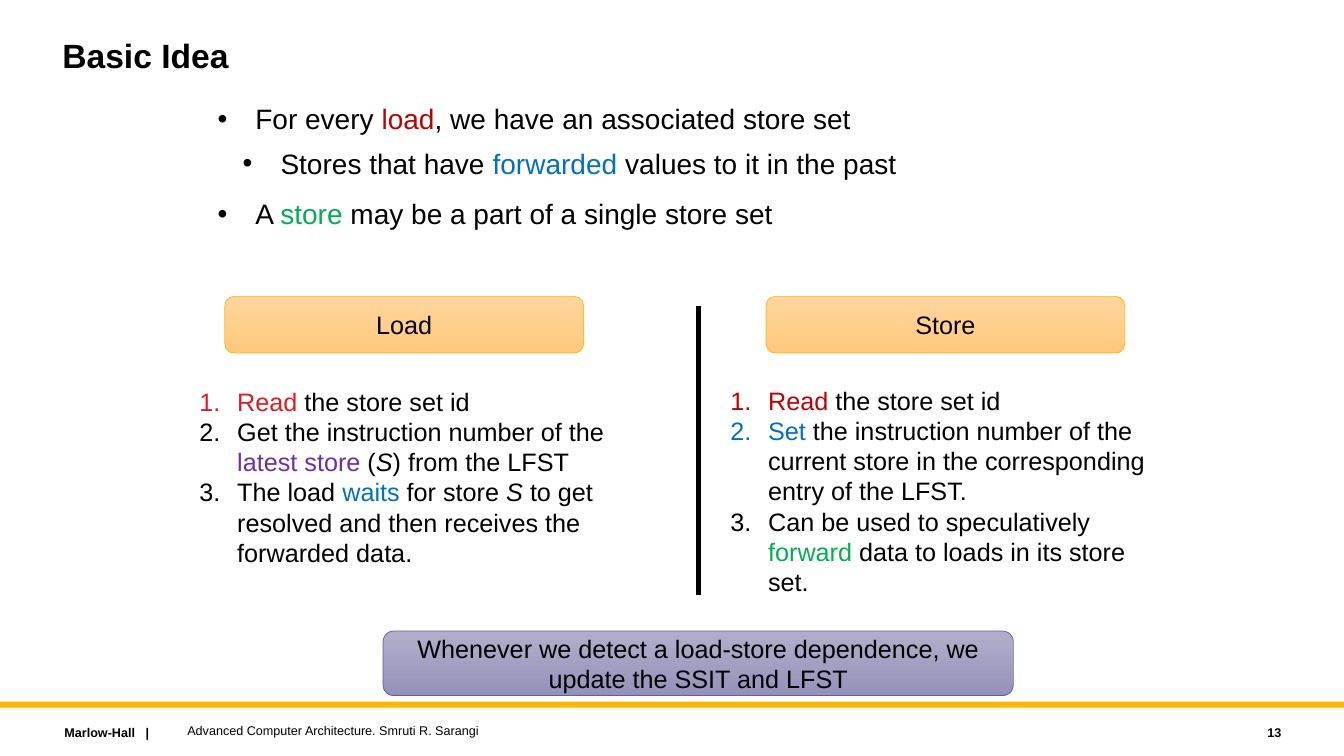
from dataclasses import dataclass
from typing import NamedTuple

from lxml import etree
from pptx import Presentation, util as u
from pptx.dml.color import RGBColor
from pptx.enum import shapes, text
from pptx.oxml.ns import qn

WIDE, HIGH = u.Inches(13.333), u.Inches(7.5)
BLACK, AMBER, RED, BLUE, GREEN = "000000", "FFB600", "C00000", "0070C0", "00B050"
LEFT, MID, RIGHT = text.PP_ALIGN.LEFT, text.PP_ALIGN.CENTER, text.PP_ALIGN.RIGHT
INDENT = u.Inches(0.375)


class Area(NamedTuple):
    """Left, top, width and height as percent of the slide."""
    x: float
    y: float
    w: float
    h: float


class Bit(NamedTuple):
    words: str
    tint: str = BLACK
    slant: bool = False


@dataclass
class Line:
    bits: list[Bit]
    mark: str = ""
    level: int = 0
    gap: float = 0


@dataclass
class Label:
    area: Area
    lines: list[Line]
    size: float
    bold: bool = False
    align: int = LEFT
    middle: bool = False


@dataclass
class Card:
    label: Label
    top: str
    base: str
    edge: str


def across(part: float) -> int:
    return round(WIDE * part / 100)


def down(part: float) -> int:
    return round(HIGH * part / 100)


def place(area: Area) -> tuple[int, int, int, int]:
    return across(area.x), down(area.y), across(area.w), down(area.h)


def color(code: str) -> RGBColor:
    return RGBColor.from_string(code)


def plain(words: str) -> list[Line]:
    return [Line([Bit(words)])]


def steps(*rows: list[Bit]) -> list[Line]:
    return [Line(row, "1") for row in rows]


def bullet(para, line: Line) -> None:
    props = para._p.get_or_add_pPr()
    props.set("marL", str(INDENT + line.level * u.Inches(0.25)))
    props.set("indent", str(-INDENT))
    if line.mark == "1":
        etree.SubElement(props, qn("a:buAutoNum"), type="arabicPeriod")
    else:
        etree.SubElement(props, qn("a:buFont"), typeface="Arial")
        etree.SubElement(props, qn("a:buChar"), char=line.mark)


def write(frame, label: Label) -> None:
    frame.word_wrap = True
    anchor = text.MSO_ANCHOR
    frame.vertical_anchor = anchor.MIDDLE if label.middle else anchor.TOP
    for i, line in enumerate(label.lines):
        para = frame.add_paragraph() if i else frame.paragraphs[0]
        para.alignment = label.align
        para.level = line.level
        para.space_before = u.Pt(line.gap)
        if line.mark:
            bullet(para, line)
        for bit in line.bits:
            for j, words in enumerate(bit.words.split("\n")):
                if j:
                    para.add_line_break()
                if not words:
                    continue
                run = para.add_run()
                run.text = words
                font = run.font
                font.name, font.size = "Arial", u.Pt(label.size)
                font.bold, font.italic = label.bold, bit.slant
                font.color.rgb = color(bit.tint)


def draw_label(slide, label: Label) -> None:
    write(slide.shapes.add_textbox(*place(label.area)).text_frame, label)


def draw_card(slide, card: Card) -> None:
    box = slide.shapes.add_shape(
        shapes.MSO_SHAPE.ROUNDED_RECTANGLE, *place(card.label.area))
    box.shadow.inherit = False
    box.fill.gradient()
    box.fill.gradient_angle = 270
    for stop, code, spot in zip(box.fill.gradient_stops, (card.top, card.base), (0, 1)):
        stop.color.rgb = color(code)
        stop.position = spot
    box.line.color.rgb = color(card.edge)
    box.line.width = u.Pt(0.5)
    write(box.text_frame, card.label)


def draw_bar(slide, area: Area) -> None:
    bar = slide.shapes.add_shape(shapes.MSO_SHAPE.RECTANGLE, *place(area))
    bar.shadow.inherit = False
    bar.fill.solid()
    bar.fill.fore_color.rgb = color(AMBER)
    bar.line.fill.background()


def draw_rule(slide, x: float, top: float, base: float) -> None:
    rule = slide.shapes.add_connector(
        shapes.MSO_CONNECTOR.STRAIGHT, across(x), down(top), across(x), down(base))
    rule.line.color.rgb = color(BLACK)
    rule.line.width = u.Pt(3)
    etree.SubElement(rule._element.spPr, qn("a:effectLst"))


# Title, main points and footer
POINTS = [
    Line([Bit("For every "), Bit("load", RED),
          Bit(", we have an associated store set")], "•"),
    Line([Bit("Stores that have "), Bit("forwarded", BLUE),
          Bit(" values to it in the past")], "•", 1, 8),
    Line([Bit("A "), Bit("store", GREEN),
          Bit(" may be a part of a single store set")], "•", 0, 12),
]
# Steps taken by each kind of instruction
LOAD = steps(
    [Bit("Read", "E21A23"), Bit(" the store set id")],
    [Bit("Get the instruction number of the "), Bit("latest store", "7030A0"),
     Bit(" ("), Bit("S", slant=True), Bit(") from the LFST")],
    [Bit("The load "), Bit("waits", BLUE), Bit(" for store "), Bit("S", slant=True),
     Bit(" to get resolved and then receives the forwarded data.")],
)
STORE = steps(
    [Bit("Read", RED), Bit(" the store set id")],
    [Bit("Set", BLUE), Bit(" the instruction number of the\n"
                           "current store in the corresponding\nentry of the LFST.")],
    [Bit("Can be used to speculatively\n"), Bit("forward", GREEN),
     Bit(" data to loads in its store \nset.")],
)
LABELS = [
    Label(Area(4.05, 95.2, 17, 3.33), plain("Marlow-Hall   |"), 9, bold=True),
    Label(Area(3.9, 4, 75, 12), plain("Basic Idea"), 24, bold=True),
    Label(Area(15.45, 12.8, 67.4, 23.5), POINTS, 20),
    Label(Area(13.2, 94.93, 60, 3.33),
          plain("Advanced Computer Architecture. Smruti R. Sarangi"), 9, middle=True),
    Label(Area(85.58, 95.2, 10.5, 3.33), plain("13"), 9, True, RIGHT, True),
    Label(Area(14.1, 50.4, 32.55, 25.6), LOAD, 18),
    Label(Area(53.6, 50.27, 32.55, 29.6), STORE, 18),
]
# Headings and closing note
CARDS = [
    Card(Label(Area(x, 39.2, 26.7, 7.5), plain(name), 18, align=MID, middle=True),
         "FFD69E", "FFC97C", AMBER)
    for name, x in (("Load", 16.73), ("Store", 57))
]
CARDS.append(Card(
    Label(Area(28.5, 83.47, 46.9, 8.53),
          plain("Whenever we detect a load-store dependence, we update the SSIT and LFST"),
          18, align=MID, middle=True),
    "B0AFCA", "9492BB", "625D9C"))


def main() -> None:
    deck = Presentation()
    deck.slide_width, deck.slide_height = WIDE, HIGH
    slide = deck.slides.add_slide(deck.slide_layouts[6])
    draw_bar(slide, Area(0, 92.8, 100, 0.8))
    for label in LABELS:
        draw_label(slide, label)
    for card in CARDS:
        draw_card(slide, card)
    draw_rule(slide, 51.98, 40.53, 78.67)
    deck.save("out.pptx")


if __name__ == "__main__":
    main()
